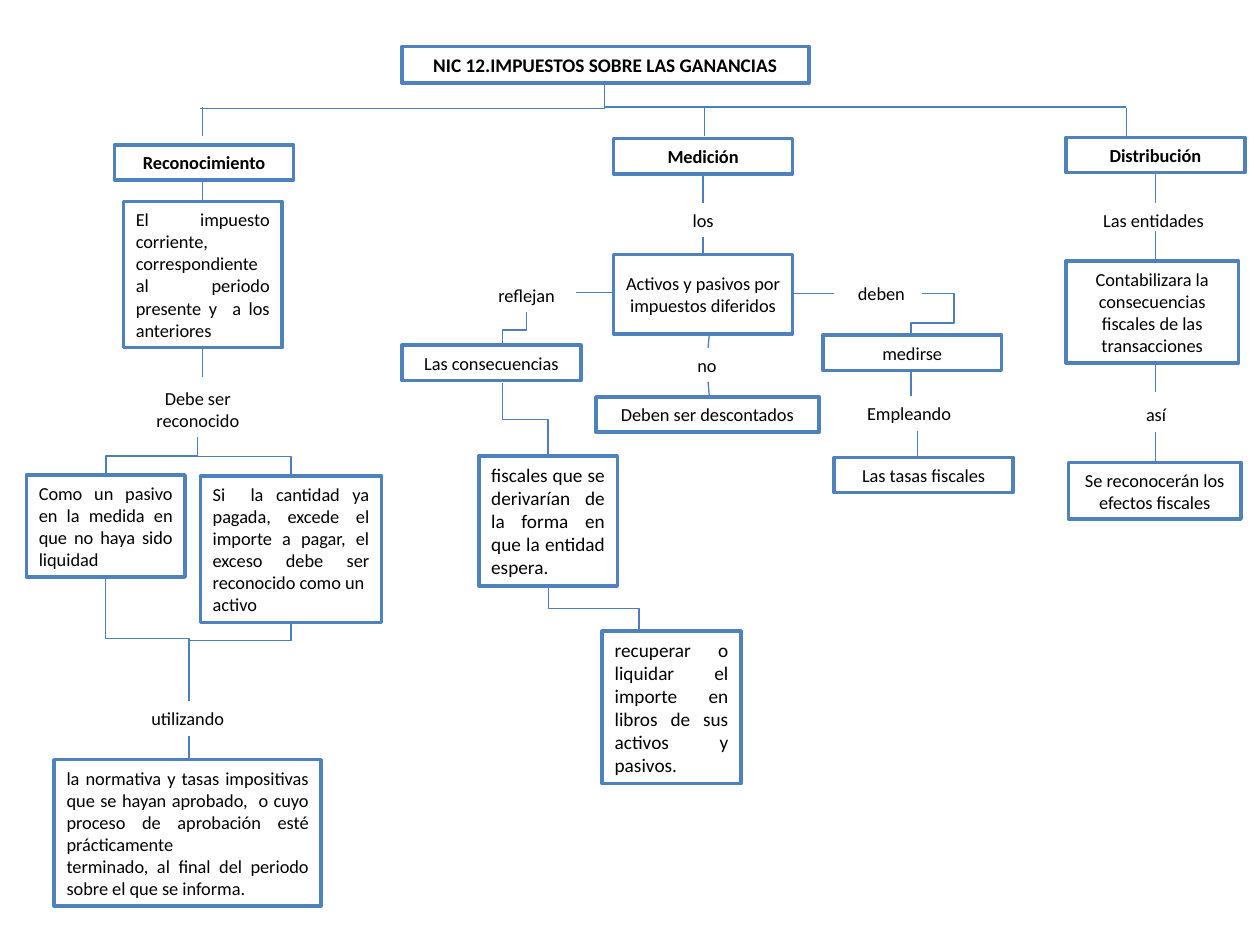
import pptx
import pptx.dml.color
import pptx.enum.shapes
import pptx.enum.text
import pptx.oxml.ns
import pptx.oxml.xmlchemy
import pptx.util

WHITE = pptx.dml.color.RGBColor(0xFF, 0xFF, 0xFF)
BLACK = pptx.dml.color.RGBColor(0x00, 0x00, 0x00)
BORDER = pptx.dml.color.RGBColor(0x4F, 0x81, 0xBD)
LINK = pptx.dml.color.RGBColor(0x4B, 0x7E, 0xBC)
CENTER = pptx.enum.text.PP_ALIGN.CENTER
JUSTIFY = pptx.enum.text.PP_ALIGN.JUSTIFY
STRAIGHT = pptx.enum.shapes.MSO_CONNECTOR.STRAIGHT
ELBOW = pptx.enum.shapes.MSO_CONNECTOR.ELBOW

deck = pptx.Presentation()
deck.slide_width = pptx.util.Inches(10)
deck.slide_height = pptx.util.Inches(7.5)
slide = deck.slides.add_slide(deck.slide_layouts[6])

# The grid has 100 columns and 75 rows, with square cells.
COL = deck.slide_width / 100
ROW = deck.slide_height / 75
LABEL = 2.8  # rows taken by one line of text


def write(shape, paragraphs, align, size, bold):
    frame = shape.text_frame
    frame.word_wrap = True
    for index, words in enumerate(paragraphs):
        paragraph = frame.paragraphs[0] if index == 0 else frame.add_paragraph()
        paragraph.alignment = align
        run = paragraph.add_run()
        run.text = words
        run.font.name = "Calibri"
        run.font.size = pptx.util.Pt(size)
        run.font.bold = bold
        run.font.color.rgb = BLACK


def link(x1, y1, x2, y2, preset=None, bends=(), downward=True):
    """Join two points; a downward elbow leaves its first point vertically."""
    kind = ELBOW if preset else STRAIGHT
    turned = bool(preset) and downward
    rightward = x2 > x1
    if turned:
        # Lay the elbow on its side around the same centre, then rotate it.
        mid_x, mid_y = (x1 + x2) / 2, (y1 + y2) / 2
        run, rise = (y2 - y1) / 2, abs(x2 - x1) / 2
        if rightward:
            run = -run
        x1, x2, y1, y2 = mid_x - run, mid_x + run, mid_y - rise, mid_y + rise
    line = slide.shapes.add_connector(
        kind, round(x1 * COL), round(y1 * ROW), round(x2 * COL), round(y2 * ROW))
    line.line.color.rgb = LINK
    line.line.width = pptx.util.Pt(0.75)
    properties = line._element.spPr
    properties.append(pptx.oxml.xmlchemy.OxmlElement("a:effectLst"))
    if turned:
        frame = properties.find(pptx.oxml.ns.qn("a:xfrm"))
        frame.set("rot", str((270 if rightward else 90) * 60000))
    if preset:
        geometry = properties.find(pptx.oxml.ns.qn("a:prstGeom"))
        geometry.set("prst", preset)
        guides = geometry.get_or_add_avLst()
        for number, share in enumerate(bends, start=1):
            guide = pptx.oxml.xmlchemy.OxmlElement("a:gd")
            guide.set("name", f"adj{number}")
            guide.set("fmla", f"val {round(share * 100000)}")
            guides.append(guide)


# Straight links: x, y, x, y
for ends in [
    (16.1, 8.5, 16.1, 10.8), (55.9, 8.5, 55.9, 10.8), (89.4, 8.6, 89.4, 10.9),
    (16.1, 14.3, 16.1, 16.1), (16.1, 27.6, 16.1, 29.9), (15, 58.4, 15, 60.3),
    (55.8, 13.7, 55.8, 16.1), (55.8, 18.8, 55.8, 20.2),
    (56.3, 26.5, 56.2, 27.6), (56.2, 30.3, 56.3, 31.5),
    (66.2, 23.3, 62.9, 23.3), (49, 23.2, 45.7, 23.2),
    (72.3, 29.3, 72.3, 31.4), (72.8, 34.2, 72.8, 36.3),
    (91.7, 13.7, 91.7, 16.1), (91.7, 18.3, 91.7, 20.7),
    (91.7, 28.8, 91.7, 31.1), (91.7, 34.3, 91.7, 36.6),
]:
    link(*ends)

# From the title to its outer branches
link(48, 6.6, 15.9, 8.6, "bentConnector2")
link(48, 6.6, 89.4, 8.5, "bentConnector2")

# Elbows: x, y, x, y, share of the height where they bend
for *ends, bend in [
    (15.7, 34.7, 8.4, 37.7, 0.5),
    (15.7, 34.7, 23.1, 37.8, 0.5),
    (8.4, 45.8, 15, 55.6, 0.5),
    (23.1, 49.4, 15, 55.6, 0.23),
    (41.8, 24.8, 39.9, 27.6, 0.5),
    (39.9, 30.4, 43.5, 36.2, 0.5),
    (43.5, 46.5, 50.7, 50.1, 0.5),
]:
    link(*ends, "bentConnector3", [bend])

# From "deben" around to "medirse"
link(73.2, 23.3, 72.3, 26.6, "bentConnector4", [-2.8, 0.71], downward=False)

# Concept boxes: left, top, width, height, paragraphs, alignment, size, bold
for left, top, width, height, paragraphs, align, size, bold in [
    (31.9, 3.7, 32.3, 2.9, ["NIC 12.IMPUESTOS SOBRE LAS GANANCIAS"], CENTER, 11, True),
    (9.1, 11.5, 14.2, LABEL, ["Reconocimiento"], CENTER, 10.5, True),
    (48.7, 11, 14.2, LABEL, ["Medición"], CENTER, 10.5, True),
    (84.6, 10.9, 14.2, LABEL, ["Distribución"], CENTER, 10.5, True),
    (9.8, 16, 12.6, 11.6,
     ["El impuesto corriente, correspondiente al periodo presente y  a los anteriores"],
     JUSTIFY, 10.5, False),
    (2.1, 37.7, 12.6, 8.1,
     ["Como un pasivo en la medida en que no haya sido liquidad"], JUSTIFY, 10.5, False),
    (15.9, 37.8, 14.4, 11.6,
     ["Si  la cantidad ya pagada, excede el importe a pagar, el exceso debe ser "
      "reconocido como un", "activo"], JUSTIFY, 10.5, False),
    (4.3, 60.3, 21.2, 11.6,
     ["la normativa y tasas impositivas que se hayan aprobado,  o cuyo proceso de "
      "aprobación esté prácticamente",
      "terminado, al final del periodo sobre el que se informa."], JUSTIFY, 10.5, False),
    (48.7, 20.2, 14.2, 6.3,
     ["Activos y pasivos por impuestos diferidos"], CENTER, 10.5, False),
    (47.3, 31.5, 17.7, LABEL, ["Deben ser descontados"], CENTER, 10.5, False),
    (65.3, 26.6, 14.2, LABEL, ["medirse"], CENTER, 10.5, False),
    (66.2, 36.3, 14.2, LABEL, ["Las tasas fiscales"], CENTER, 10.5, False),
    (31.9, 27.4, 14.2, LABEL, ["Las consecuencias"], CENTER, 10.5, False),
    (38, 36.2, 11, 10.3,
     ["fiscales que se derivarían de la forma en que la entidad espera."],
     JUSTIFY, 11, False),
    (47.8, 50.1, 11, 12.1,
     ["recuperar o liquidar el importe en libros de sus activos y pasivos."],
     JUSTIFY, 11, False),
    (84.6, 20.7, 13.7, 8.1,
     ["Contabilizara la consecuencias fiscales de las transacciones"],
     CENTER, 10.5, False),
    (84.8, 36.7, 13.7, 4.5,
     ["Se reconocerán los efectos fiscales"], CENTER, 10.5, False),
]:
    concept = slide.shapes.add_shape(
        pptx.enum.shapes.MSO_SHAPE.RECTANGLE,
        round(left * COL), round(top * ROW), round(width * COL), round(height * ROW))
    concept.shadow.inherit = False
    concept.fill.solid()
    concept.fill.fore_color.rgb = WHITE
    concept.line.color.rgb = BORDER
    concept.line.width = pptx.util.Pt(2)
    write(concept, paragraphs, align, size, bold)

# Linking words: left, top, width, height, words
for left, top, width, height, words in [
    (10.6, 30.2, 10.2, 4.5, "Debe ser reconocido"),
    (9.8, 55.6, 10.2, LABEL, "utilizando"),
    (53.9, 16.1, 3.8, LABEL, "los"),
    (54.2, 27.6, 3.8, LABEL, "no"),
    (66.7, 21.9, 6.5, LABEL, "deben"),
    (67, 31.4, 10.3, LABEL, "Empleando"),
    (38, 22.1, 7.6, LABEL, "reflejan"),
    (84.7, 16.1, 13.7, LABEL, "Las entidades"),
    (88.5, 31.5, 6.5, LABEL, "así"),
]:
    connective = slide.shapes.add_textbox(
        round(left * COL), round(top * ROW), round(width * COL), round(height * ROW))
    write(connective, [words], CENTER, 10.5, False)

deck.save("out.pptx")
